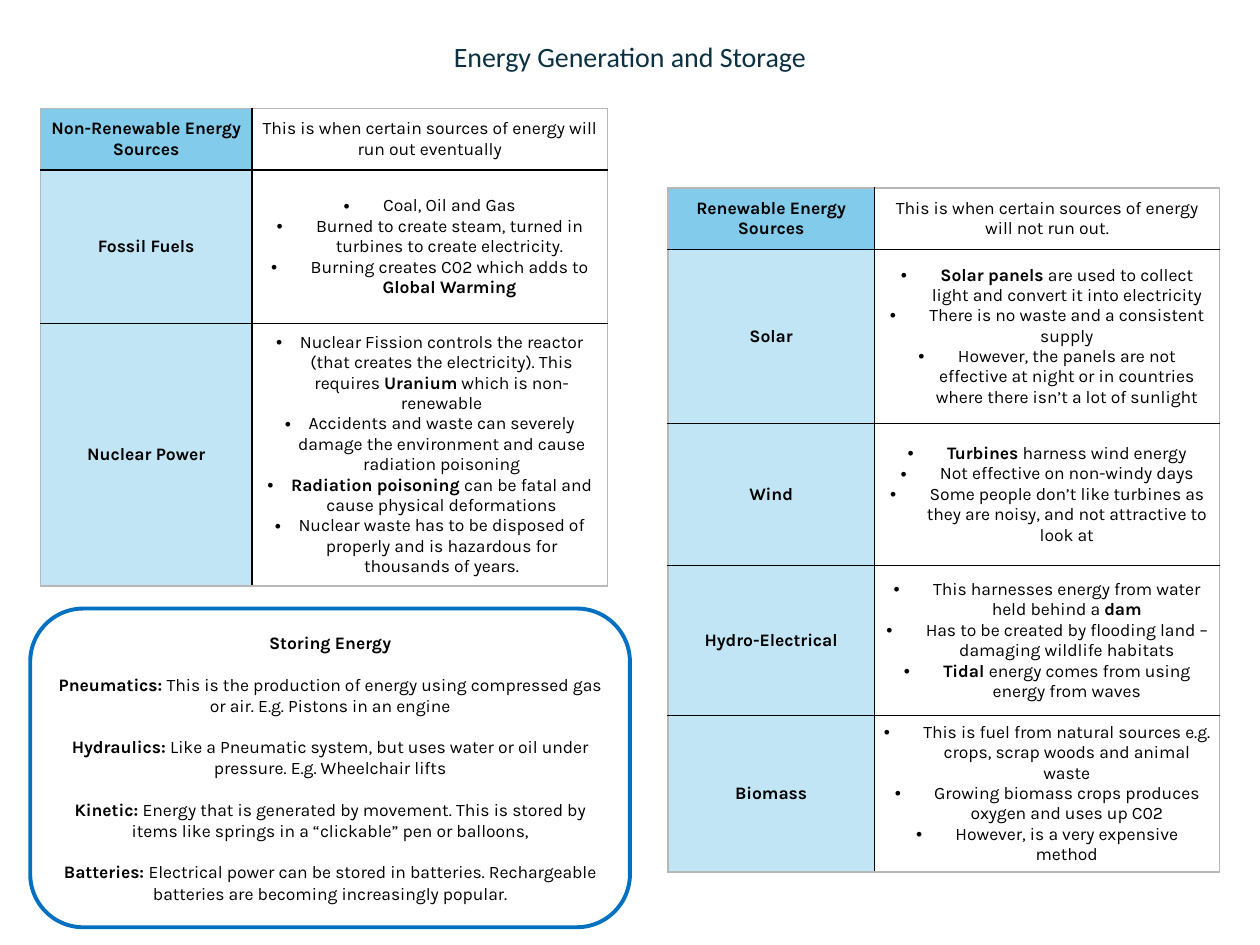
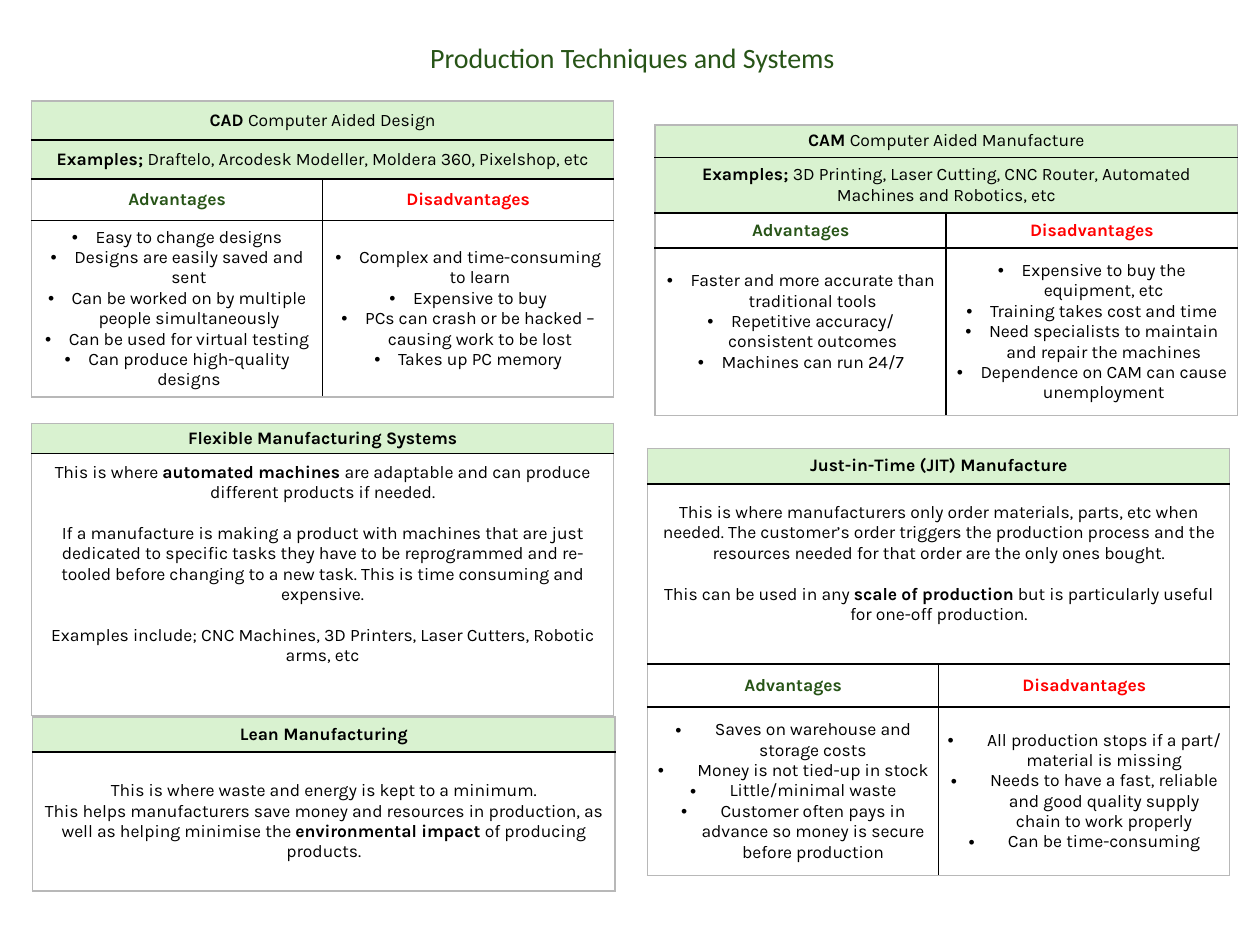
from dataclasses import dataclass
from typing import Any, Optional

import lxml.etree
import pptx
import pptx.dml.color
import pptx.enum.shapes
import pptx.enum.text
import pptx.oxml.ns
import pptx.util

qn = pptx.oxml.ns.qn
CENTER = pptx.enum.text.PP_ALIGN.CENTER
MIDDLE = pptx.enum.text.MSO_ANCHOR.MIDDLE


@dataclass(frozen=True)
class Theme:
    title_font: str = "Calibri"
    body_font: str = "Karla"
    title_size: float = 16
    body_size: float = 10
    line_height: float = 11.7
    ink: str = "000000"
    navy: str = "0B3041"
    green: str = "275417"
    red: str = "FF0000"
    sky: str = "83CBEB"
    pale_sky: str = "C1E5F5"
    mint: str = "D9F2D0"
    outline: str = "0070C0"
    frame: str = "B8B8B8"
    rule_width: float = 1
    outline_width: float = 2.25


THEME = Theme()

# Slide grid: square modules, 100 columns by 75 rows
COLUMNS, ROWS = 100, 75
SLIDE_W, SLIDE_H = pptx.util.Inches(10), pptx.util.Inches(7.5)


def col(n: float) -> int:
    return round(SLIDE_W * n / COLUMNS)


def row(n: float) -> int:
    return round(SLIDE_H * n / ROWS)


@dataclass(frozen=True)
class Box:
    left: float
    top: float
    width: float
    height: float

    def place(self) -> tuple[int, int, int, int]:
        return col(self.left), row(self.top), col(self.width), row(self.height)


@dataclass(frozen=True)
class Cell:
    """Paragraphs split by new lines; ** switches bold on and off."""
    text: str
    fill: Optional[str] = None
    color: str = THEME.ink
    hang: float = 0             # bullet indent in columns
    gap: bool = False           # one line between paragraphs
    spare_lines: int = 0        # room kept free below the text
    full_width: bool = False


@dataclass(frozen=True)
class Grid:
    left: float
    top: float
    widths: tuple[float, ...]
    heights: tuple[float, ...]
    cells: tuple[tuple[Cell, ...], ...]

    @property
    def box(self) -> Box:
        return Box(self.left, self.top, sum(self.widths), sum(self.heights))


# Text
def style_run(r: Any, font: str, size: float, color: str, bold: bool = False) -> None:
    r.font.name, r.font.size, r.font.bold = font, pptx.util.Pt(size), bold
    r.font.color.rgb = pptx.dml.color.RGBColor.from_string(color)


def add_bullet(p: Any, hang: float) -> None:
    pPr = p._p.get_or_add_pPr()
    pPr.set("marL", str(col(hang)))
    pPr.set("indent", str(-col(hang)))
    lxml.etree.SubElement(pPr, qn("a:buFont")).set("typeface", "Arial")
    lxml.etree.SubElement(pPr, qn("a:buChar")).set("char", "•")


def write(tf: Any, cell: Cell) -> None:
    tf.word_wrap = True
    for i, line in enumerate(cell.text.split("\n")):
        p = tf.paragraphs[0] if i == 0 else tf.add_paragraph()
        p.alignment = CENTER
        if cell.gap and i:
            p.space_before = pptx.util.Pt(THEME.line_height)
        if cell.hang:
            add_bullet(p, cell.hang)
        for j, part in enumerate(line.split("**")):
            if part:
                r = p.add_run()
                r.text = part
                style_run(r, THEME.body_font, THEME.body_size, cell.color, j % 2 == 1)


# Tables
def set_borders(tc: Any, colors: tuple[str, ...]) -> None:
    tcPr = tc.get_or_add_tcPr()
    for i, (side, color) in enumerate(zip("LRTB", colors)):
        ln = lxml.etree.Element(qn(f"a:ln{side}"))
        ln.set("w", str(pptx.util.Pt(THEME.rule_width)))
        fill = lxml.etree.SubElement(ln, qn("a:solidFill"))
        lxml.etree.SubElement(fill, qn("a:srgbClr")).set("val", color)
        tcPr.insert(i, ln)


def draw_cell(c: Any, cell: Cell) -> None:
    c.vertical_anchor = MIDDLE
    c.margin_left = c.margin_right = col(0.7)
    c.margin_top = row(0.35)
    c.margin_bottom = row(0.35) + pptx.util.Pt(THEME.line_height * cell.spare_lines)
    write(c.text_frame, cell)
    if cell.fill:
        c.fill.solid()
        c.fill.fore_color.rgb = pptx.dml.color.RGBColor.from_string(cell.fill)
    else:
        c.fill.background()


def draw_table(s: Any, grid: Grid) -> None:
    n_rows, n_cols = len(grid.heights), len(grid.widths)
    table = s.shapes.add_table(n_rows, n_cols, *grid.box.place()).table
    table.first_row = table.horz_banding = False
    for column, width in zip(table.columns, grid.widths):
        column.width = col(width)
    for i, (line, height) in enumerate(zip(grid.cells, grid.heights)):
        table.rows[i].height = row(height)
        merged = line[0].full_width and n_cols > 1
        if merged:
            table.cell(i, 0).merge(table.cell(i, n_cols - 1))
        for j, cell in enumerate(line):
            draw_cell(table.cell(i, j), cell)
        for j in range(n_cols):
            on_frame = (merged or j == 0, merged or j == n_cols - 1,
                        i == 0, i == n_rows - 1)
            set_borders(table.cell(i, j)._tc,
                        tuple(THEME.frame if f else THEME.ink for f in on_frame))


# Shared slide parts
def add_slide(prs: Any, title: str, box: Box, color: str) -> Any:
    s = prs.slides.add_slide(prs.slide_layouts[5])
    sp = s.shapes.title
    sp.left, sp.top, sp.width, sp.height = box.place()
    tf = sp.text_frame
    tf.text = title
    tf.auto_size = pptx.enum.text.MSO_AUTO_SIZE.NONE
    tf.vertical_anchor = MIDDLE
    p = tf.paragraphs[0]
    p.alignment = CENTER
    style_run(p.runs[0], THEME.title_font, THEME.title_size, color)
    return s


def draw_panel(s: Any, box: Box, text: str) -> None:
    sp = s.shapes.add_shape(pptx.enum.shapes.MSO_SHAPE.ROUNDED_RECTANGLE, *box.place())
    sp.shadow.inherit = False
    sp.fill.background()
    sp.line.color.rgb = pptx.dml.color.RGBColor.from_string(THEME.outline)
    sp.line.width = pptx.util.Pt(THEME.outline_width)
    sp.text_frame.vertical_anchor = MIDDLE
    write(sp.text_frame, Cell(text, gap=True))


# Kinds of table row
WIDE, NARROW = 3.13, 1.88       # bullet indents


def source_head(name: str, meaning: str) -> tuple[Cell, ...]:
    return Cell(f"**{name}**", THEME.sky), Cell(meaning)


def source(name: str, points: str, hang: float = WIDE) -> tuple[Cell, ...]:
    return Cell(f"**{name}**", THEME.pale_sky), Cell(points, hang=hang)


def band(text: str) -> tuple[Cell, ...]:
    return (Cell(text, THEME.mint, full_width=True),)


def passage(text: str, gap: bool = True, spare_lines: int = 0) -> tuple[Cell, ...]:
    return (Cell(text, gap=gap, spare_lines=spare_lines, full_width=True),)


def pros_cons(pros: str, cons: str, hang: float = NARROW,
              spare_lines: int = 0) -> tuple[tuple[Cell, ...], ...]:
    return ((Cell("**Advantages**", color=THEME.green),
             Cell("**Disadvantages**", color=THEME.red)),
            (Cell(pros, hang=hang, spare_lines=spare_lines), Cell(cons, hang=hang)))


# Slide 1 content
NON_RENEWABLE = Grid(3.2, 8.6, (16.8, 28.2), (4.9, 12.2, 20.8), (
    source_head("Non-Renewable Energy Sources",
                "This is when certain sources of energy will run out eventually"),
    source("Fossil Fuels", """Coal, Oil and Gas
Burned to create steam, turned in turbines to create electricity.
Burning creates C02 which adds to **Global Warming**"""),
    source("Nuclear Power", """Nuclear Fission controls the reactor (that creates the \
electricity). This requires **Uranium** which is non-renewable
Accidents and waste can severely damage the environment and cause radiation poisoning
**Radiation poisoning **can be fatal and cause physical deformations
Nuclear waste has to be disposed of properly and is hazardous for thousands of years.""",
           NARROW),
))

RENEWABLE = Grid(53, 14.9, (16.4, 27.4), (4.9, 13.8, 11.3, 11.9, 12.4), (
    source_head("Renewable Energy Sources",
                "This is when certain sources of energy will not run out."),
    source("Solar", """**Solar panels **are used to collect light and convert it into electricity
There is no waste and a consistent supply
However, the panels are not effective at night or in countries where there isn’t a lot of \
sunlight"""),
    source("Wind", """**Turbines** harness wind energy
Not effective on non-windy days
Some people don’t like turbines as they are noisy, and not attractive to look at"""),
    source("Hydro-Electrical", """This harnesses energy from water held behind a **dam**
Has to be created by flooding land – damaging wildlife habitats
**Tidal **energy comes from using energy from waves"""),
    source("Biomass", """This is fuel from natural sources e.g. crops, scrap woods and animal waste
Growing biomass crops produces oxygen and uses up C02
However, is a very expensive method"""),
))

STORING = """**Storing Energy**
**Pneumatics: **This is the production of energy using compressed gas or air. \
E.g. Pistons in an engine
**Hydraulics: **Like a Pneumatic system, but uses water or oil under pressure. \
E.g. Wheelchair lifts
**Kinetic: **Energy that is generated by movement. This is stored by items like springs \
in a “clickable” pen or balloons,
**Batteries: **Electrical power can be stored in batteries. Rechargeable batteries are \
becoming increasingly popular."""

# Slide 2 content
FULL = (46.2,)
HALVES = (23.1, 23.1)

PRODUCTION = (
    Grid(2.5, 8, HALVES, (3.1, 3.1, 3.3, 14), (
        band("**CAD **Computer Aided Design"),
        band("**Examples; **Draftelo, Arcodesk Modeller, Moldera 360, Pixelshop, etc"),
        *pros_cons("""Easy to change designs
Designs are easily saved and sent
Can be worked on by multiple people simultaneously
Can be used for virtual testing
Can produce high-quality designs""", """Complex and time-consuming to learn
Expensive to buy
PCs can crash or be hacked – causing work to be lost
Takes up PC memory"""),
    )),
    Grid(52, 9.9, HALVES, (2.6, 4.4, 2.8, 13.3), (
        band("**CAM **Computer Aided Manufacture"),
        band("**Examples; **3D Printing, Laser Cutting, CNC Router, "
             "Automated Machines and Robotics, etc"),
        *pros_cons("""Faster and more accurate than traditional tools
Repetitive accuracy/ consistent outcomes
Machines can run 24/7""", """Expensive to buy the equipment, etc
Training takes cost and time
Need specialists to maintain and repair the machines
Dependence on CAM can cause unemployment""", spare_lines=1),
    )),
    Grid(2.5, 33.6, FULL, (2.4, 20.8), (
        band("**Flexible Manufacturing Systems**"),
        passage("""This is where **automated machines **are adaptable and can produce \
different products if needed.
If a manufacture is making a product with machines that are just dedicated to specific \
tasks they have to be reprogrammed and re-tooled before changing to a new task. \
This is time consuming and expensive.
Examples include; CNC Machines, 3D Printers, Laser Cutters, Robotic arms, etc""",
                spare_lines=2),
    )),
    Grid(51.4, 35.6, HALVES, (2.8, 14.3, 3.4, 13.4), (
        band("**Just-in-Time (JIT) Manufacture**"),
        passage("""This is where manufacturers only order materials, parts, etc when needed. \
The customer’s order triggers the production process and the resources needed for that \
order are the only ones bought.
This can be used in any **scale of production** but is particularly useful for one-off \
production.""", spare_lines=1),
        *pros_cons("""Saves on warehouse and storage costs
Money is not tied-up in stock
Little/minimal waste
Customer often pays in advance so money is secure before production""",
                   """All production stops if a part/ material is missing
Needs to have a fast, reliable and good quality supply chain to work properly
Can be time-consuming""", WIDE),
    )),
    Grid(2.6, 56.9, FULL, (2.8, 11), (
        band("**Lean Manufacturing**"),
        passage("""This is where waste and energy is kept to a minimum.
This helps manufacturers save money and resources in production, as well as helping \
minimise the **environmental impact **of producing products.""", gap=False),
    )),
)


def main() -> None:
    prs = pptx.Presentation()
    prs.slide_width, prs.slide_height = SLIDE_W, SLIDE_H

    s = add_slide(prs, "Energy Generation and Storage", Box(18.2, 2.6, 63.6, 3.7), THEME.navy)
    for grid in (NON_RENEWABLE, RENEWABLE):
        draw_table(s, grid)
    draw_panel(s, Box(2.4, 48.3, 47.6, 25.3), STORING)

    s = add_slide(prs, "Production Techniques and Systems", Box(0, 2.7, 100.4, 3.7), THEME.green)
    for grid in PRODUCTION:
        draw_table(s, grid)

    prs.save("out.pptx")


if __name__ == "__main__":
    main()
